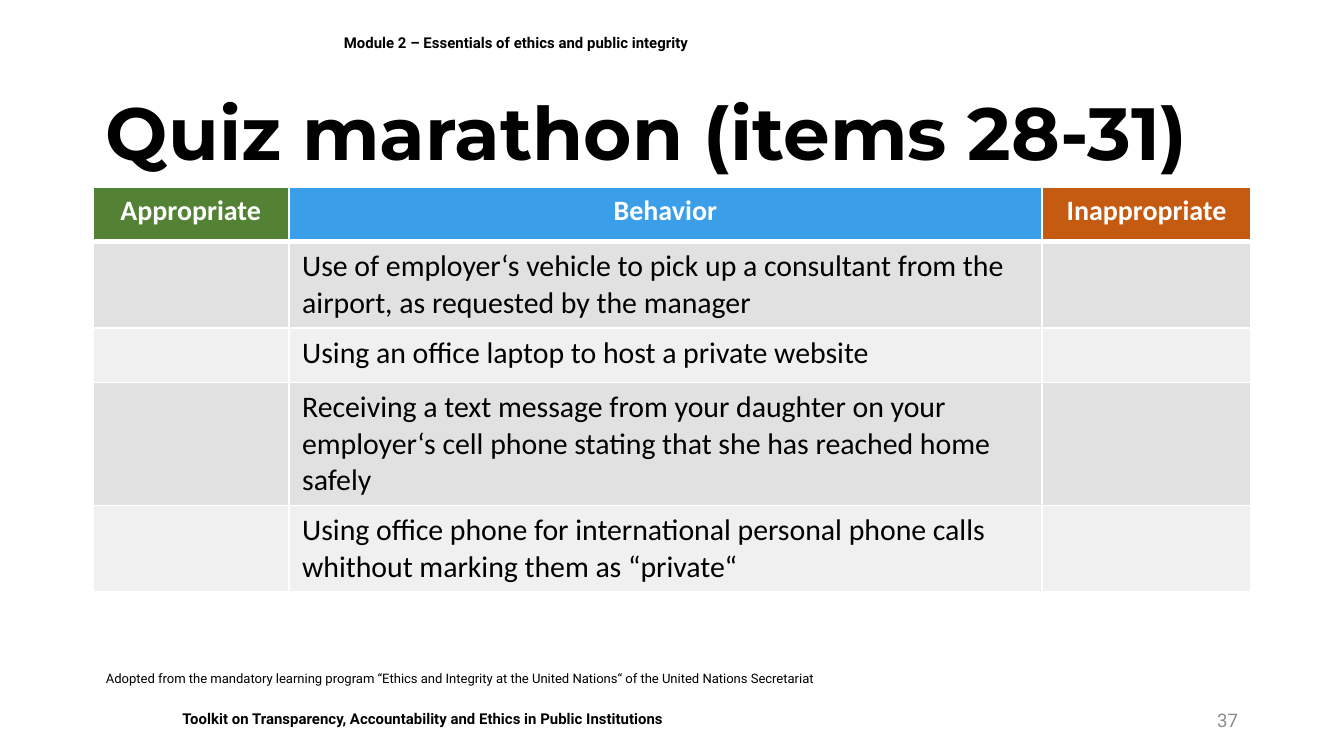
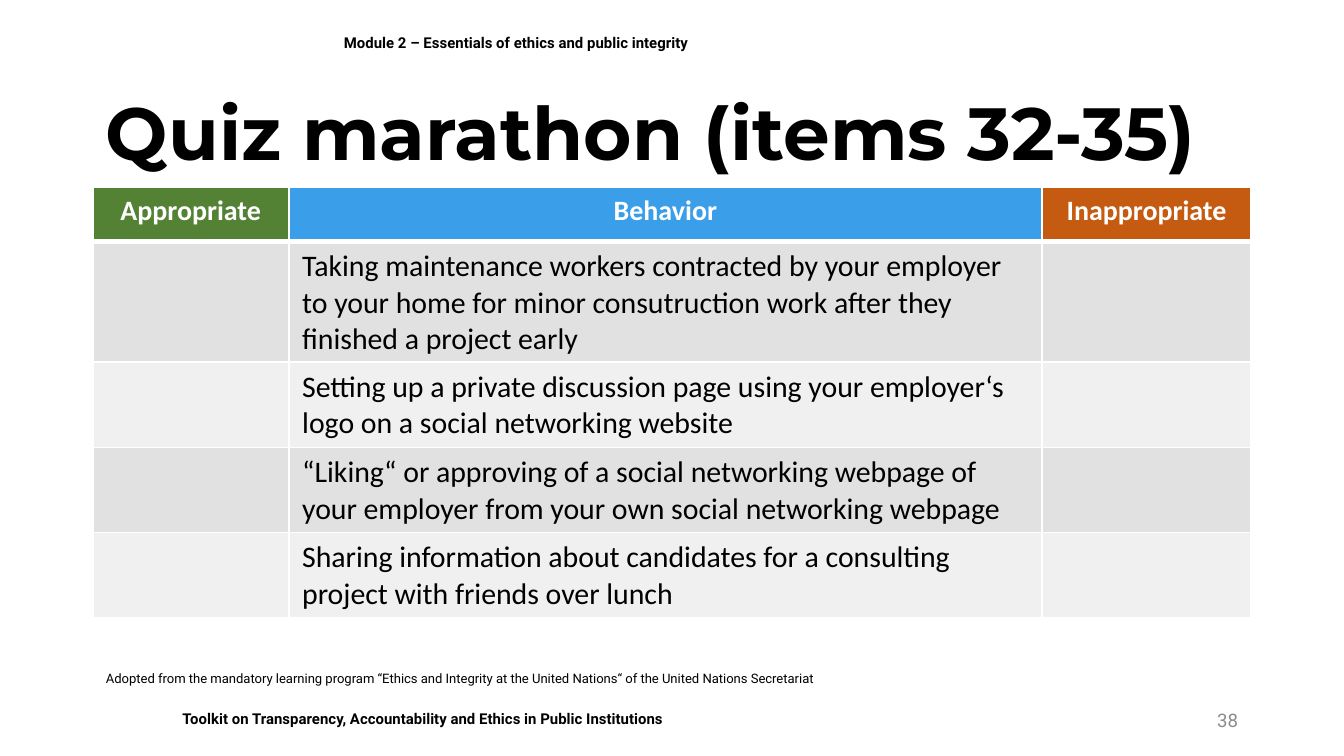
from dataclasses import dataclass

from lxml.etree import SubElement as Sub
from pptx import Presentation
from pptx.dml.color import RGBColor as Rgb
from pptx.enum.shapes import MSO_SHAPE as Form
from pptx.enum.text import MSO_ANCHOR as Anchor, PP_ALIGN as Align
from pptx.oxml.ns import qn
from pptx.util import Pt

# Shared colours and measures
BLACK, WHITE, GREY = "000000", "FFFFFF", "8C8C8C"
BANDS = ("E1E1E1", "F0F0F0")
LEFT, WIDTH = 49.7, 620.6
COLS = (105, 403.6, 112)
ROW = 29.2


@dataclass(frozen=True)
class Font:
    name: str
    size: float
    color: str = BLACK
    bold: bool = False


@dataclass(frozen=True)
class Label:
    x: float
    y: float
    w: float
    h: float
    font: Font
    anchor: Anchor = Anchor.MIDDLE
    align: Align = Align.LEFT
    line: float = 1.0
    after: float = 0
    fill: str = ""


@dataclass(frozen=True)
class Head:
    text: str
    fill: str


@dataclass(frozen=True)
class Quiz:
    page: int
    items: str
    acts: tuple[str, ...]


SMALL = Font("Roboto", 8, bold=True)
HEAD = Font("Calibri", 15, WHITE, True)
BODY = Font("Calibri", 16)

FOOT = Label(90.7, 376.6, 516.2, 17.3, SMALL, Anchor.TOP, after=18, fill=WHITE)
MODULE = Label(177.1, 7.2, 493.2, 31.7, SMALL)
PAGE = Label(508.3, 375.1, 162, 21.6, Font("Roboto", 10, GREY), align=Align.RIGHT)
TITLE = Label(LEFT, 46.1, WIDTH, 54, Font("Montserrat", 39.6, bold=True), line=0.9)
SOURCE = Label(LEFT, 355.7, 398.2, 15.8, Font("Roboto", 7), Anchor.TOP)

HEADS = (
    Head("Appropriate", "548235"),
    Head("Behavior", "3A9EE9"),
    Head("Inappropriate", "C55A11"),
)

QUIZZES = (
    Quiz(37, "28-31", (
        "Use of employer‘s vehicle to pick up a consultant from the airport, "
        "as requested by the manager",
        "Using an office laptop to host a private website",
        "Receiving a text message from your daughter on your employer‘s cell phone "
        "stating that she has reached home safely",
        "Using office phone for international personal phone calls "
        "whithout marking them as “private“",
    )),
    Quiz(38, "32-35", (
        "Taking maintenance workers contracted by your employer to your home "
        "for minor consutruction work after they finished a project early",
        "Setting up a private discussion page using your employer‘s logo "
        "on a social networking website",
        "“Liking“ or approving of a social networking webpage of your employer "
        "from your own social networking webpage",
        "Sharing information about candidates for a consulting project "
        "with friends over lunch",
    )),
)


def paint(target, color: str) -> None:
    """Fill a shape or a cell with one colour."""
    target.fill.solid()
    target.fill.fore_color.rgb = Rgb.from_string(color)


def write(frame, text: str, font: Font, align: Align):
    """Put one styled paragraph in a text frame."""
    para = frame.paragraphs[0]
    para.text = text
    para.alignment = align
    face = para.font
    face.name, face.size, face.bold = font.name, Pt(font.size), font.bold
    face.color.rgb = Rgb.from_string(font.color)
    return para


def put(slide, label: Label, text: str) -> None:
    """Place a label, on a filled rectangle if it has a fill."""
    area = [Pt(v) for v in (label.x, label.y, label.w, label.h)]
    if label.fill:
        box = slide.shapes.add_shape(Form.RECTANGLE, *area)
        box.shadow.inherit = False
        paint(box, label.fill)
        box.line.fill.background()
    else:
        box = slide.shapes.add_textbox(*area)
    frame = box.text_frame
    frame.word_wrap = True
    frame.vertical_anchor = label.anchor
    para = write(frame, text, label.font, label.align)
    para.line_spacing = label.line
    para.space_after = Pt(label.after)


def edge(cell, top: float, base: float) -> None:
    """Draw white borders, with the top and bottom widths given."""
    props = cell._tc.get_or_add_tcPr()
    for side, width in (("L", 1), ("R", 1), ("T", top), ("B", base)):
        line = Sub(props, qn(f"a:ln{side}"), w=str(Pt(width)))
        Sub(Sub(line, qn("a:solidFill")), qn("a:srgbClr"), val=WHITE)


def grid(slide, acts: tuple[str, ...]) -> None:
    """Draw the answer table; rows grow with their text."""
    count = len(acts) + 1
    table = slide.shapes.add_table(
        count, len(COLS), Pt(LEFT), Pt(100.1), Pt(WIDTH), Pt(ROW * count)
    ).table
    for col, width in zip(table.columns, COLS):
        col.width = Pt(width)
    # Header row
    for i, head in enumerate(HEADS):
        cell = table.cell(0, i)
        edge(cell, 1, 3)
        paint(cell, head.fill)
        write(cell.text_frame, head.text, HEAD, Align.CENTER)
    # Banded rows
    for r, act in enumerate(acts, 1):
        for i in range(len(COLS)):
            cell = table.cell(r, i)
            edge(cell, 3 if r == 1 else 1, 1)
            paint(cell, BANDS[(r - 1) % 2])
        write(table.cell(r, 1).text_frame, act, BODY, Align.LEFT)


def build(deck, quiz: Quiz) -> None:
    slide = deck.slides.add_slide(deck.slide_layouts[6])
    put(slide, FOOT, "Toolkit on Transparency, Accountability and Ethics in Public Institutions")
    grid(slide, quiz.acts)
    put(slide, MODULE, "Module 2 – Essentials of ethics and public integrity")
    put(slide, PAGE, str(quiz.page))
    put(slide, TITLE, f"Quiz marathon (items {quiz.items})")
    put(slide, SOURCE, "Adopted from the mandatory learning program “Ethics and Integrity "
        "at the United Nations“ of the United Nations Secretariat")


def main() -> None:
    deck = Presentation()
    deck.slide_width, deck.slide_height = Pt(720), Pt(405)
    for quiz in QUIZZES:
        build(deck, quiz)
    deck.save("out.pptx")


if __name__ == "__main__":
    main()
